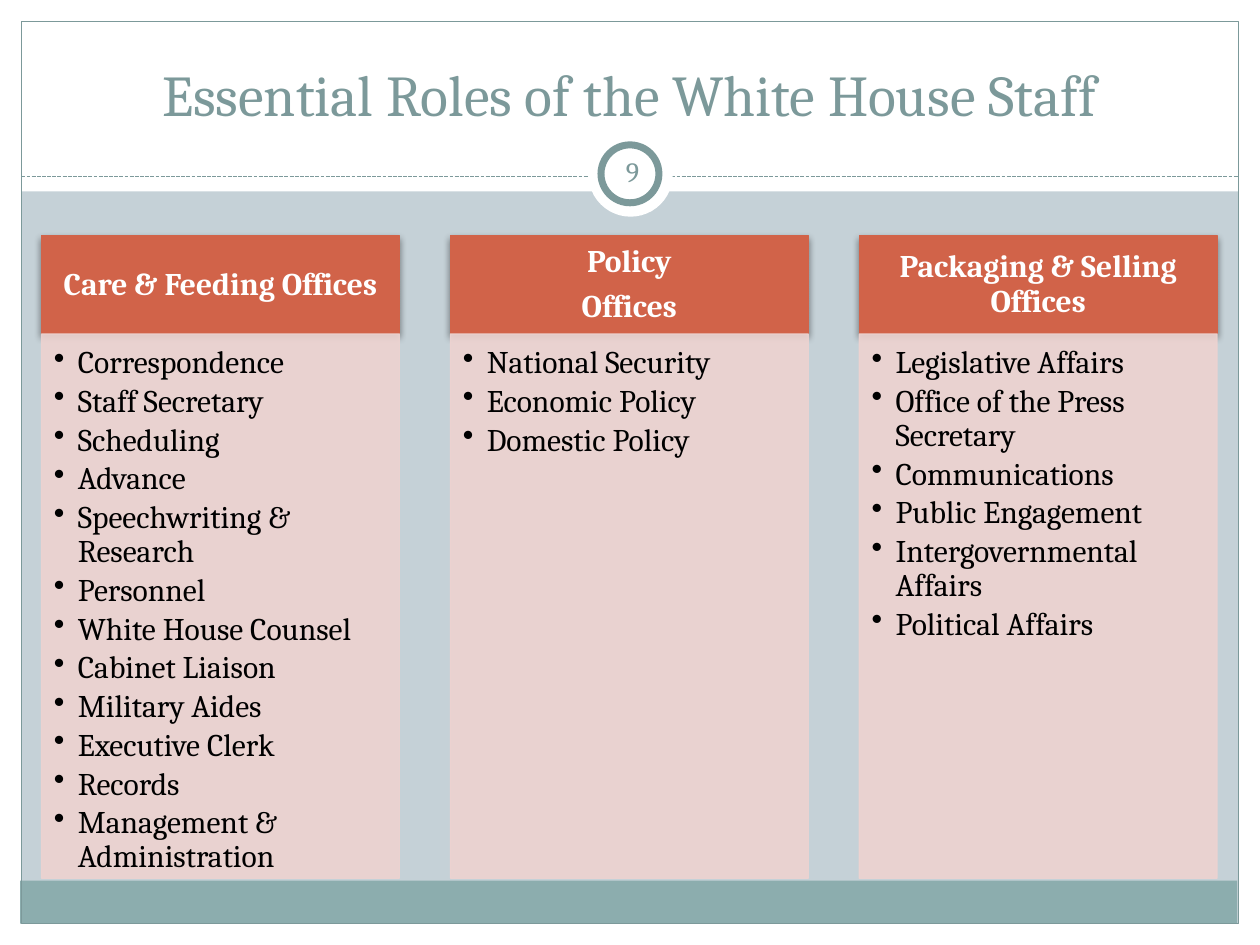
from pptx import Presentation
from pptx.dml.color import RGBColor as RGB
from pptx.enum.dml import MSO_LINE as Dash
from pptx.enum.shapes import MSO_CONNECTOR as Link, MSO_SHAPE as Form
from pptx.enum.text import MSO_ANCHOR as Anchor, PP_ALIGN as Align
from pptx.oxml.ns import qn
from pptx.util import Inches, Pt
from lxml.etree import SubElement as Sub

HUES = {
    "back": "C5D1D7", "white": "FFFFFF", "band": "8CADAE", "edge": "7C999A",
    "head": "D16349", "body": "EED3D0", "black": "000000",
}
ROLES = [
    (["Care & Feeding Offices"],
     ["Correspondence", "Staff Secretary", "Scheduling", "Advance",
      "Speechwriting & Research", "Personnel", "White House Counsel",
      "Cabinet Liaison", "Military Aides", "Executive Clerk", "Records",
      "Management & Administration"]),
    (["Policy", "Offices"],
     ["National Security", "Economic Policy", "Domestic Policy"]),
    (["Packaging & Selling Offices"],
     ["Legislative Affairs", "Office of the Press Secretary", "Communications",
      "Public Engagement", "Intergovernmental Affairs", "Political Affairs"]),
]


class Deck:
    font = "Cambria"

    def __init__(self):
        self.prs = Presentation()
        self.prs.slide_width, self.prs.slide_height = Inches(10), Inches(7.5)
        self.slide = self.prs.slides.add_slide(self.prs.slide_layouts[5])
        self.paint(self.slide.background.fill, "back")

    def paint(self, fill, hue, alpha=None):
        fill.solid()
        fill.fore_color.rgb = RGB.from_string(HUES[hue])
        if alpha:
            self.fade(fill, alpha)

    def fade(self, fill, alpha):
        tint = fill._xPr.find(".//" + qn("a:srgbClr"))
        Sub(tint, qn("a:alpha"), val=str(alpha * 1000))

    def shape(self, box, fill=None, line=None, width=0.75, form=Form.RECTANGLE,
              alpha=None):
        item = self.slide.shapes.add_shape(form, *map(Inches, box))
        item.shadow.inherit = False
        if fill:
            self.paint(item.fill, fill, alpha)
        else:
            item.fill.background()
        if line:
            self.paint(item.line.fill, line, alpha)
            item.line.width = Pt(width)
        else:
            item.line.fill.background()
        return item

    def rule(self, left, right, top):
        ends = map(Inches, (left, top, right, top))
        item = self.slide.shapes.add_connector(Link.STRAIGHT, *ends)
        self.paint(item.line.fill, "edge")
        item.line.width = Pt(0.75)
        item.line.dash_style = Dash.SQUARE_DOT
        Sub(item._element.spPr, qn("a:effectLst"))

    def shade(self, item):
        glow = Sub(item._element.spPr.find(qn("a:effectLst")), qn("a:outerShdw"),
                   blurRad=str(Pt(4)), dist=str(Pt(2)), dir="5400000",
                   rotWithShape="0")
        tint = Sub(glow, qn("a:srgbClr"), val=HUES["black"])
        Sub(tint, qn("a:alpha"), val="45000")

    def text(self, item, lines, size, hue, pads, anchor=Anchor.MIDDLE,
             align=Align.CENTER, bold=False, gap=0, lead=None):
        frame = item.text_frame
        frame.word_wrap = True
        frame.vertical_anchor = anchor
        (frame.margin_left, frame.margin_top,
         frame.margin_right, frame.margin_bottom) = map(Inches, pads)
        frame.text = "\n".join(lines)
        for para in frame.paragraphs:
            para.alignment = align
            para.line_spacing = lead
            para.space_after = Pt(gap)
            for run in para.runs:
                run.font.name = self.font
                run.font.size = Pt(size)
                run.font.bold = bold
                run.font.color.rgb = RGB.from_string(HUES[hue])

    def title(self, words, box):
        item = self.slide.shapes.title
        item.left, item.top, item.width, item.height = map(Inches, box)
        self.text(item, [words], 33, "edge", (0.1, 0.05, 0.1, 0.05), Anchor.BOTTOM)
        tree = item._element.getparent()
        tree.append(item._element)

    def label(self, words, box):
        item = self.slide.shapes.add_textbox(*map(Inches, box))
        self.text(item, [words], 16, "edge", (0.05,) * 4)

    def head(self, lines, box):
        item = self.shape(box, "head", "head")
        self.shade(item)
        self.text(item, lines, 18, "white", (0.14, 0.08, 0.14, 0.08),
                  bold=True, gap=6.3, lead=0.9)

    def bullets(self, lines, box):
        item = self.shape(box, "body", "body", alpha=90)
        self.text(item, lines, 18, "black", (0.1, 0.1, 0.14, 0.16),
                  Anchor.TOP, Align.LEFT, gap=2.7, lead=0.9)
        for para in item.text_frame.paragraphs:
            para.level = 1
            props = para._p.get_or_add_pPr()
            props.set("marL", str(Inches(0.19)))
            props.set("indent", str(-Inches(0.19)))
            Sub(props, qn("a:buChar"), char="•")


def main():
    deck = Deck()
    for box in ((0, 7.33, 10, 0.17), (0, 0, 10, 1.52),
                (0, 0, 0.17, 7.5), (9.83, 0, 0.17, 7.5)):
        deck.shape(box, "white")
    deck.shape((0.16, 6.99, 9.66, 0.34), "band")
    deck.shape((0.17, 0.17, 9.66, 7.16), line="edge")
    deck.rule(0.17, 9.83, 1.4)
    deck.shape((4.67, 1.05, 0.67, 0.67), "white", form=Form.OVAL)
    deck.shape((4.77, 1.15, 0.46, 0.46), "white", "edge", 4, Form.OVAL)
    deck.title("Essential Roles of the White House Staff", (0.33, 0.24, 9.33, 0.83))

    left, span, wide = 0.33, 9.33, 2.84
    step = (span - wide) / (len(ROLES) - 1)
    for i, (name, items) in enumerate(ROLES):
        x = left + i * step
        deck.head(name, (x, 1.87, wide, 0.78))
        deck.bullets(items, (x, 2.65, wide, 4.32))

    deck.label("9", (4.77, 1.12, 0.5, 0.48))
    deck.prs.save("out.pptx")


if __name__ == "__main__":
    main()
